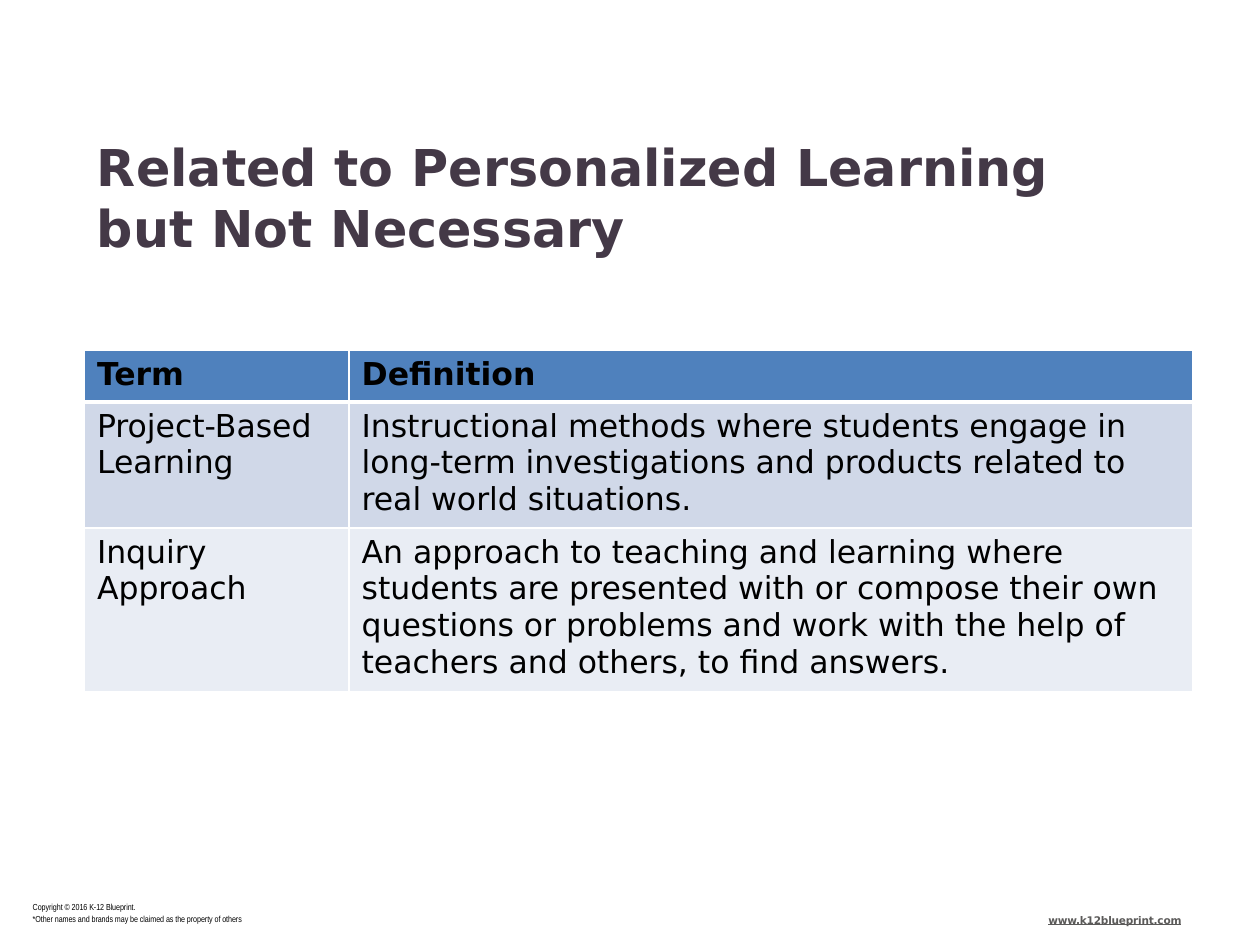
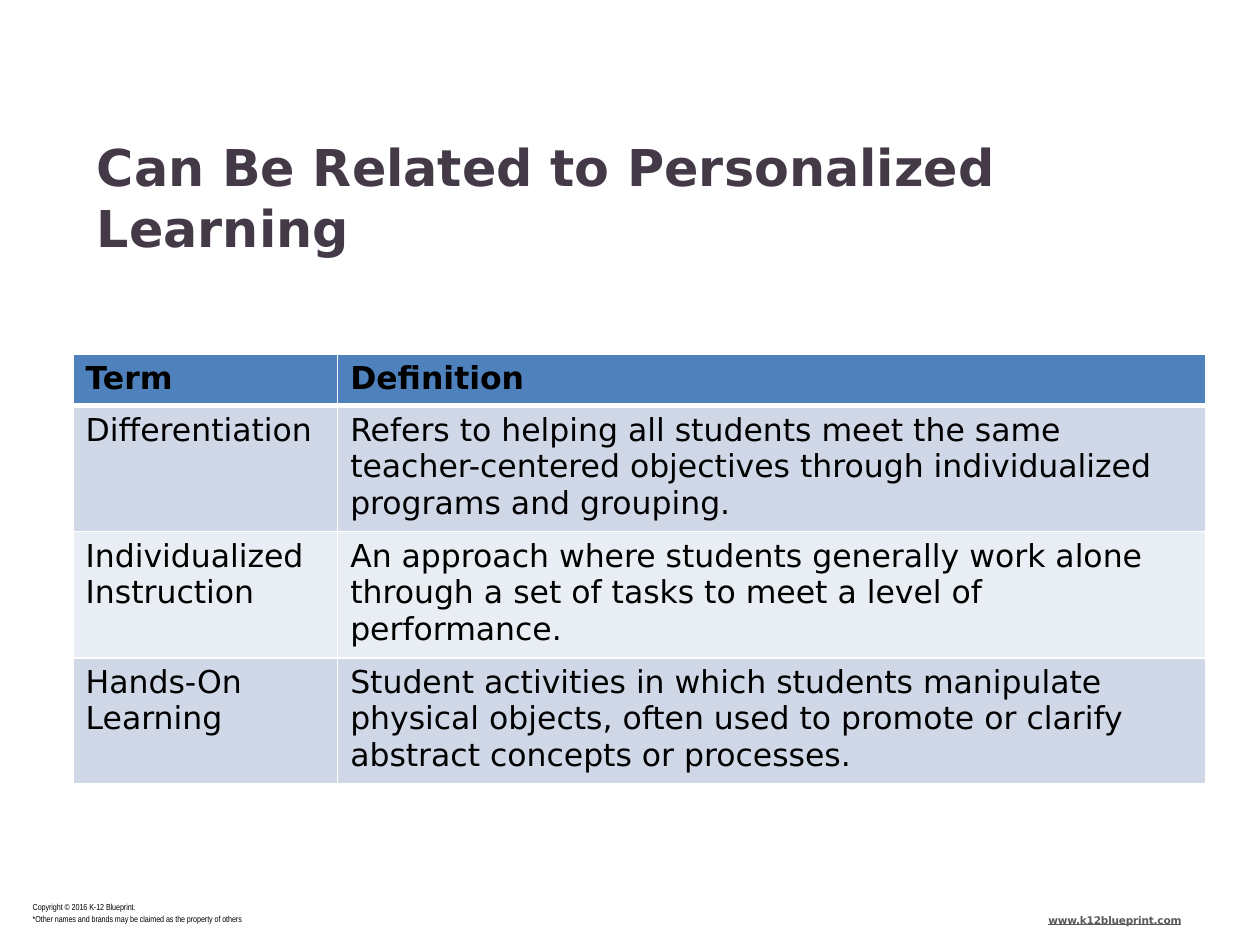
from lxml import etree
from pptx import Presentation, util as u
from pptx.dml.color import RGBColor
from pptx.oxml.ns import qn

SANS, NARROW = "DejaVu Sans", "Arial Narrow"
WHITE, BLACK = "FFFFFF", "000000"
HEADER_FILL, BAND_FILLS = "4F81BD", ("D0D8E8", "E9EDF4")
TITLE_STYLE = {"name": SANS, "size": u.Pt(29), "bold": True, "color": "443947"}
CELL_STYLE = {"name": SANS, "size": u.Pt(18), "bold": False, "color": BLACK}
HEADER_STYLE = {**CELL_STYLE, "bold": True}
COPYRIGHT_STYLE = {"name": NARROW, "size": u.Pt(5), "color": BLACK}
LINK_STYLE = {"name": SANS, "size": u.Pt(6), "bold": True, "underline": True,
              "color": "5B5A59"}

TITLE_BOX = (0.77, 1.08, 8.47, 0.49)
COPYRIGHT_BOX = (0.25, 7.14, 2.17, 0.2)
LINK_BOX = (8.31, 7.25, 1.31, 0.12)
COPYRIGHT = ("Copyright © 2016 K-12 Blueprint.",
             "*Other names and brands may be claimed as the property of others")
TERM_WIDTH, HEADER_HEIGHT = 2.1, 0.41
THREE_LINES, FOUR_LINES = 0.97, 1.26

SLIDES = [
    {"title": "Related to Personalized Learning but Not Necessary",
     "table_box": (0.67, 2.78, 8.8),
     "terms": [
         ("Project-Based Learning",
          "Instructional methods where students engage in long-term "
          "investigations and products related to real world situations.",
          THREE_LINES),
         ("Inquiry Approach",
          "An approach to teaching and learning where students are presented "
          "with or compose their own questions or problems and work with the "
          "help of teachers and others, to find answers.",
          FOUR_LINES)]},
    {"title": "Can Be Related to Personalized Learning",
     "table_box": (0.58, 2.81, 8.99),
     "terms": [
         ("Differentiation",
          "Refers to helping all students meet the same teacher-centered "
          "objectives through individualized programs and grouping.",
          THREE_LINES),
         ("Individualized Instruction",
          "An approach where students generally work alone through a set of "
          "tasks to meet a level of performance.",
          THREE_LINES),
         ("Hands-On Learning",
          "Student activities in which students manipulate physical objects, "
          "often used to promote or clarify abstract concepts or processes.",
          THREE_LINES)]},
]


def rgb(color):
    return RGBColor.from_string(color)


def write(paragraph, text, style, tracking=0):
    """Add text as one run; tracking is in hundredths of a point."""
    run = paragraph.add_run()
    run.text = text
    for name, value in style.items():
        if name == "color":
            run.font.color.rgb = rgb(value)
        else:
            setattr(run.font, name, value)
    if tracking:
        run.font._element.set("spc", str(tracking))


def add_text(slide, box, lines, style, tracking=0, indent=0, line_spacing=None):
    frame = slide.shapes.add_textbox(*map(u.Inches, box)).text_frame
    frame.word_wrap = True
    for side in ("left", "top", "right", "bottom"):
        setattr(frame, f"margin_{side}", 0)
    for index, line in enumerate(lines):
        paragraph = frame.add_paragraph() if index else frame.paragraphs[0]
        if indent:
            paragraph._p.get_or_add_pPr().set("marL", str(u.Inches(indent)))
        if line_spacing:
            paragraph.line_spacing = line_spacing
        write(paragraph, line, style, tracking)


def set_borders(cell, bottom=1):
    properties = cell._tc.get_or_add_tcPr()
    widths = {"lnL": 1, "lnR": 1, "lnT": 1, "lnB": bottom}
    for position, (tag, width) in enumerate(widths.items()):
        line = etree.Element(qn(f"a:{tag}"), w=str(u.Pt(width)))
        fill = etree.SubElement(line, qn("a:solidFill"))
        etree.SubElement(fill, qn("a:srgbClr"), val=WHITE)
        properties.insert(position, line)


def add_definition_table(slide, box, terms):
    left, top, width = box
    rows = [("Term", "Definition", HEADER_HEIGHT), *terms]
    height = sum(row[-1] for row in rows)
    table = slide.shapes.add_table(
        len(rows), 2, *map(u.Inches, (left, top, width, height))).table
    table.columns[0].width = u.Inches(TERM_WIDTH)
    table.columns[1].width = u.Inches(width - TERM_WIDTH)
    for row_index, (*texts, row_height) in enumerate(rows):
        is_header = row_index == 0
        table.rows[row_index].height = u.Inches(row_height)
        fill = HEADER_FILL if is_header else BAND_FILLS[(row_index - 1) % 2]
        for column, text in enumerate(texts):
            cell = table.cell(row_index, column)
            cell.fill.solid()
            cell.fill.fore_color.rgb = rgb(fill)
            # The first body row meets the thick rule under the header.
            set_borders(cell, bottom=3 if is_header else 1)
            if row_index == 1:
                cell._tc.tcPr.find(qn("a:lnT")).set("w", str(u.Pt(3)))
            write(cell.text_frame.paragraphs[0], text,
                  HEADER_STYLE if is_header else CELL_STYLE)


def add_footer(slide):
    add_text(slide, COPYRIGHT_BOX, COPYRIGHT, COPYRIGHT_STYLE, tracking=-5,
             indent=0.01, line_spacing=u.Pt(7.1))
    add_text(slide, LINK_BOX, ["www.k12blueprint.com"], LINK_STYLE,
             tracking=-10, indent=0.01)


def add_definition_slide(presentation, title, table_box, terms):
    slide = presentation.slides.add_slide(presentation.slide_layouts[6])
    slide.background.fill.solid()
    slide.background.fill.fore_color.rgb = rgb(WHITE)
    add_text(slide, TITLE_BOX, [title], TITLE_STYLE)
    add_definition_table(slide, table_box, terms)
    add_footer(slide)


def main():
    presentation = Presentation()
    presentation.slide_width = u.Inches(10)
    presentation.slide_height = u.Inches(7.5)
    for content in SLIDES:
        add_definition_slide(presentation, **content)
    presentation.save("out.pptx")


if __name__ == "__main__":
    main()
